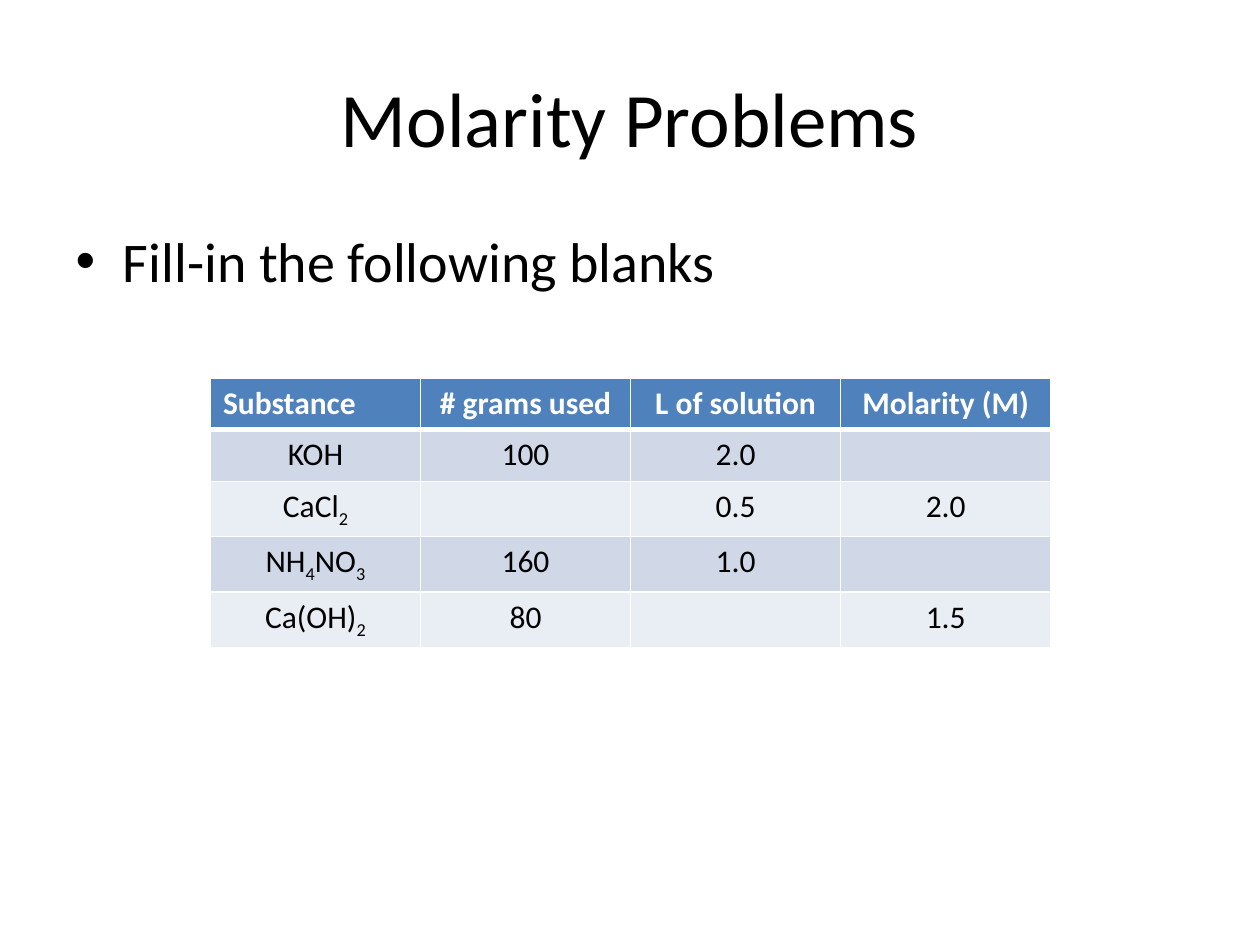
from lxml import etree
from pptx import Presentation
from pptx.dml.color import RGBColor
from pptx.enum.text import MSO_ANCHOR, PP_ALIGN
from pptx.oxml.ns import qn
from pptx.util import Inches, Pt

LEFT, CENTER = PP_ALIGN.LEFT, PP_ALIGN.CENTER
MIDDLE, TOP = MSO_ANCHOR.MIDDLE, MSO_ANCHOR.TOP
TITLE_AND_CONTENT = 1
FONT = "Calibri"
COLORS = {"text": "000000", "white": "FFFFFF", "header": "4F81BD",
          "odd_row": "D0D8E8", "even_row": "E9EDF4"}

# An underscore lowers the digit after it
PROBLEMS = [
    ["Substance", "# grams used", "L of solution", "Molarity (M)"],
    ["KOH", "100", "2.0", ""],
    ["CaCl_2", "", "0.5", "2.0"],
    ["NH_4NO_3", "160", "1.0", ""],
    ["Ca(OH)_2", "80", "", "1.5"],
]


def write_text(frame, text, size=18, color="text", bold=False, align=LEFT, anchor=TOP):
    """Fill a text frame with one paragraph, lowering digits marked by '_'."""
    frame.vertical_anchor = anchor
    paragraph = frame.paragraphs[0]
    paragraph.alignment = align
    first, *rest = text.split("_")
    pieces = [(first, False)]
    for part in rest:
        pieces += [(part[0], True), (part[1:], False)]
    for piece, lowered in pieces:
        if not piece:
            continue
        run = paragraph.add_run()
        run.text = piece
        run.font.name = FONT
        run.font.size = Pt(size)
        run.font.bold = bold
        run.font.color.rgb = RGBColor.from_string(COLORS[color])
        if lowered:
            run.font._element.set("baseline", "-25000")


class SlideBuilder:
    def __init__(self, presentation):
        layout = presentation.slide_layouts[TITLE_AND_CONTENT]
        self.slide = presentation.slides.add_slide(layout)

    def placeholder(self, index, left, top, width, height, text, **style):
        holder = self.slide.placeholders[index]
        holder.left, holder.top = Inches(left), Inches(top)
        holder.width, holder.height = Inches(width), Inches(height)
        write_text(holder.text_frame, text, **style)

    def border(self, cell, side, width):
        line = etree.Element(qn(f"a:ln{side}"), w=str(Pt(width)))
        fill = etree.SubElement(line, qn("a:solidFill"))
        etree.SubElement(fill, qn("a:srgbClr"), val=COLORS["white"])
        return line

    def table(self, left, top, width, row_height, rows):
        grid = self.slide.shapes.add_table(
            len(rows), len(rows[0]), Inches(left), Inches(top),
            Inches(width), Inches(row_height * len(rows))).table
        for r, row in enumerate(rows):
            is_header = r == 0
            fill = "header" if is_header else "odd_row" if r % 2 else "even_row"
            for c, text in enumerate(row):
                cell = grid.cell(r, c)
                cell.fill.solid()
                cell.fill.fore_color.rgb = RGBColor.from_string(COLORS[fill])
                write_text(cell.text_frame, text, bold=is_header,
                           color="white" if is_header else "text",
                           align=LEFT if is_header and c == 0 else CENTER)
                # Borders come before the fill; a thick rule closes the header
                widths = {"L": 1, "R": 1, "T": 3 if r == 1 else 1,
                          "B": 3 if is_header else 1}
                properties = cell._tc.get_or_add_tcPr()
                for place, (side, weight) in enumerate(widths.items()):
                    properties.insert(place, self.border(cell, side, weight))


def main():
    presentation = Presentation()
    presentation.slide_width, presentation.slide_height = Inches(10), Inches(7.5)
    builder = SlideBuilder(presentation)

    # Title and instruction
    builder.placeholder(0, 0.5, 0.3, 9, 1.25, "Molarity Problems",
                        size=44, align=CENTER, anchor=MIDDLE)
    builder.placeholder(1, 0.5, 1.75, 9, 4.95, "Fill-in the following blanks", size=32)

    # Problem table
    builder.table(1.67, 3, 6.67, 0.41, PROBLEMS)

    presentation.save("out.pptx")


if __name__ == "__main__":
    main()
